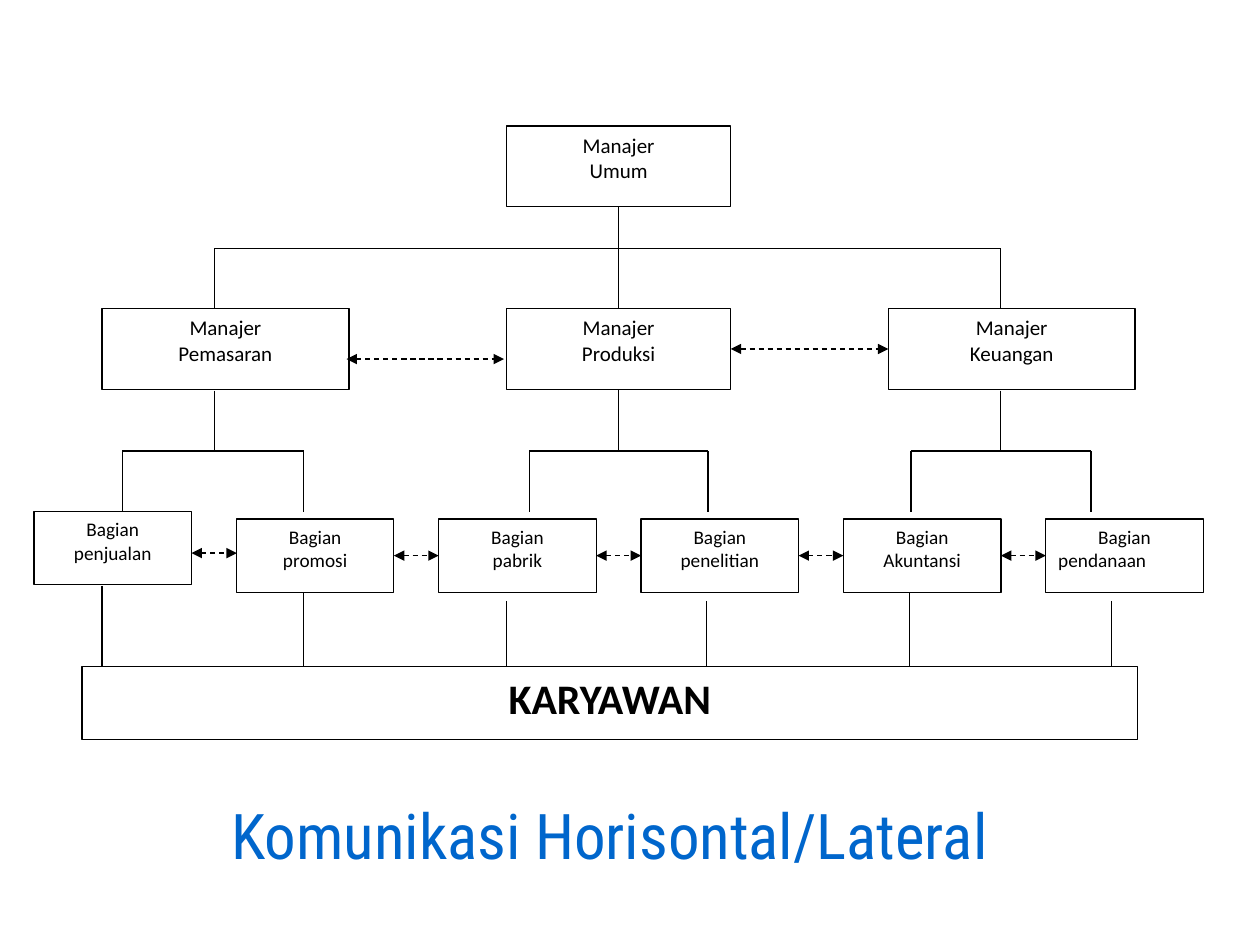
"""Build the organisation chart slide on horizontal communication."""
import pptx
import pptx.dml.color
import pptx.enum.dml
import pptx.enum.shapes
import pptx.enum.text
import pptx.oxml
import pptx.oxml.ns
import pptx.util

Inches = pptx.util.Inches
Align = pptx.enum.text.PP_ALIGN
BLACK = pptx.dml.color.RGBColor(0x00, 0x00, 0x00)
WHITE = pptx.dml.color.RGBColor(0xFF, 0xFF, 0xFF)
BLUE = pptx.dml.color.RGBColor(0x00, 0x66, 0xCC)

TITLE = "Komunikasi Horisontal/Lateral"
STAFF = "KARYAWAN"
MANAGERS = {
    "Umum": (4.02, 1, 1.78),
    "Pemasaran": (0.81, 2.45, 1.96),
    "Produksi": (4.02, 2.45, 1.78),
    "Keuangan": (7.05, 2.45, 1.96),
}
SECTIONS = ["penjualan", "promosi", "pabrik", "penelitian", "Akuntansi", "pendanaan"]
SECTION_LEFT, SECTION_STEP, SECTION_WIDTH, SECTION_HEIGHT = 0.27, 1.606, 1.25, 0.58
SECTION_TOP, FIRST_SECTION_TOP = 4.12, 4.06
MANAGER_HEIGHT, MANAGER_BOTTOM = 0.64, 3.1
UPPER_BUS, LOWER_BUS, STAFF_TOP = 1.97, 3.58, 5.29
BRANCHES = [(1.7, 0.97, 2.41), (4.91, 4.2, 5.62), (7.94, 7.23, 8.66)]
STAFF_LINES = [(0.81, 4.65), (2.41, 4.71), (4.02, 4.77), (5.61, 4.77), (7.22, 4.71), (8.82, 4.77)]
TOP, LEFT, BOTTOM, RIGHT = range(4)


def write(shape, text, size, color=BLACK, font="Calibri", bold=False, aligns=(Align.CENTER,), wrap=True):
    frame = shape.text_frame
    frame.text = text
    frame.word_wrap = wrap
    frame.vertical_anchor = pptx.enum.text.MSO_ANCHOR.TOP
    for index, paragraph in enumerate(frame.paragraphs):
        paragraph.alignment = aligns[min(index, len(aligns) - 1)]
        for run in paragraph.runs:
            run.font.name, run.font.size = font, pptx.util.Pt(size)
            run.font.bold, run.font.color.rgb = bold, color


def add_box(slide, left, top, width, height, text, size, **text_format):
    shape = slide.shapes.add_shape(
        pptx.enum.shapes.MSO_SHAPE.RECTANGLE, Inches(left), Inches(top), Inches(width), Inches(height))
    shape.shadow.inherit = False
    shape.fill.solid()
    shape.fill.fore_color.rgb = WHITE
    shape.line.color.rgb = BLACK
    shape.line.width = pptx.util.Pt(0.75)
    write(shape, text, size, **text_format)
    return shape


def add_line(slide, start=(0, 0), end=(0, 0), begin_at=None, end_at=None, arrows=False):
    connector = slide.shapes.add_connector(
        pptx.enum.shapes.MSO_CONNECTOR.STRAIGHT, *map(Inches, start + end))
    if begin_at:
        connector.begin_connect(*begin_at)
    if end_at:
        connector.end_connect(*end_at)
    connector.line.color.rgb = BLACK
    connector.line.width = pptx.util.Pt(0.75)
    if arrows:
        connector.line.dash_style = pptx.enum.dml.MSO_LINE.DASH
        for tag in ("headEnd", "tailEnd"):
            connector.line._get_or_add_ln().append(pptx.oxml.parse_xml(
                f'<a:{tag} {pptx.oxml.ns.nsdecls("a")} type="triangle"/>'))
    connector._element.spPr.append(
        pptx.oxml.parse_xml(f'<a:effectLst {pptx.oxml.ns.nsdecls("a")}/>'))


def add_boxes(slide):
    managers = {
        name: add_box(slide, left, top, width, MANAGER_HEIGHT, f"Manajer\n{name}", 12)
        for name, (left, top, width) in MANAGERS.items()
    }
    sections = []
    for index, name in enumerate(SECTIONS):
        top = SECTION_TOP if index else FIRST_SECTION_TOP
        last_align = Align.LEFT if name == SECTIONS[-1] else Align.CENTER
        sections.append(add_box(
            slide, SECTION_LEFT + index * SECTION_STEP, top, SECTION_WIDTH, SECTION_HEIGHT,
            f"Bagian\n{name}", 11, aligns=(Align.CENTER, last_align)))
    add_box(slide, 0.65, STAFF_TOP, 8.38, 0.58, STAFF, 24, bold=True)
    return managers, sections


def add_hierarchy(slide, managers):
    add_line(slide, begin_at=(managers["Umum"], BOTTOM), end_at=(managers["Produksi"], TOP))
    outer = (BRANCHES[0][0], BRANCHES[-1][0])
    add_line(slide, (outer[0], UPPER_BUS), (outer[1], UPPER_BUS))
    for x in outer:
        add_line(slide, (x, UPPER_BUS), (x, 2.45))
    for stem, left, right in BRANCHES:
        joined = (managers["Produksi"], BOTTOM) if stem == 4.91 else None
        add_line(slide, (stem, MANAGER_BOTTOM), (stem, LOWER_BUS), begin_at=joined)
        add_line(slide, (left, LOWER_BUS), (right, LOWER_BUS))
        for x in (left, right):
            add_line(slide, (x, LOWER_BUS), (x, 4.06))
    for x, top in STAFF_LINES:
        add_line(slide, (x, top), (x, STAFF_TOP))


def add_lateral_arrows(slide, managers, sections):
    add_line(slide, (2.75, 2.85), (4, 2.85), arrows=True)
    add_line(slide, begin_at=(managers["Produksi"], RIGHT), end_at=(managers["Keuangan"], LEFT), arrows=True)
    add_line(slide, (1.52, 4.39), (1.88, 4.39), arrows=True)
    for previous, following in zip(sections[1:], sections[2:]):
        add_line(slide, begin_at=(previous, RIGHT), end_at=(following, LEFT), arrows=True)


def main():
    presentation = pptx.Presentation()
    presentation.slide_width, presentation.slide_height = Inches(10), Inches(7.5)
    slide = presentation.slides.add_slide(presentation.slide_layouts[5])
    managers, sections = add_boxes(slide)
    add_hierarchy(slide, managers)
    add_lateral_arrows(slide, managers, sections)
    title = slide.shapes.title
    title.left, title.top, title.width, title.height = map(Inches, (0.98, 6.27, 7.72, 0.62))
    write(title, TITLE, 36, color=BLUE, font="Roboto Condensed", wrap=False)
    presentation.save("out.pptx")


if __name__ == "__main__":
    main()
